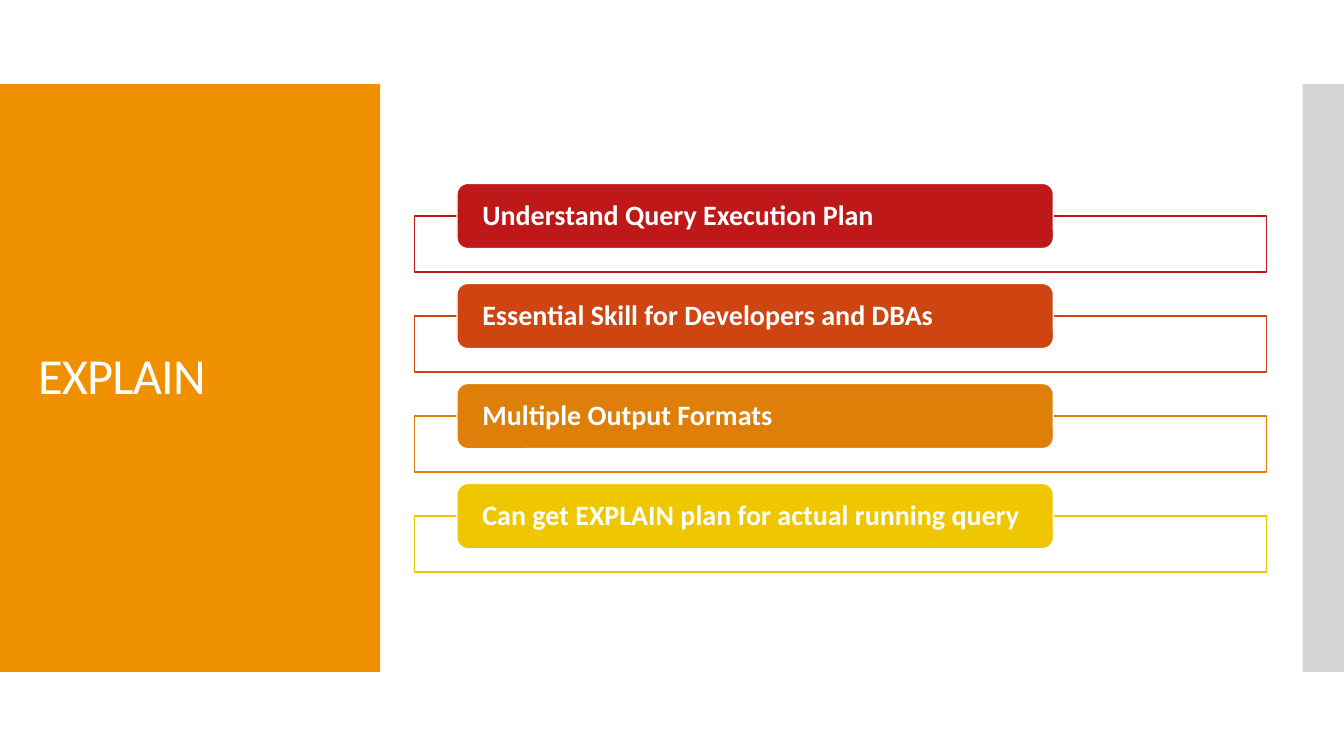
from pptx import Presentation
from pptx.dml.color import RGBColor
from pptx.enum.shapes import MSO_SHAPE as Kind
from pptx.enum.text import MSO_ANCHOR as Anchor, PP_ALIGN as Align
from pptx.util import Inches, Pt

WIDE, HIGH = 13.33, 7.5
TOP, TALL = HIGH / 9, HIGH * 7 / 9
WHITE = "FFFFFF"
ITEMS = [
    ("Understand Query Execution Plan", "BE1818"),
    ("Essential Skill for Developers and DBAs", "CE4511"),
    ("Multiple Output Formats", "DE7F09"),
    ("Can get EXPLAIN plan for actual running query", "EFC700"),
]


def color(code):
    return RGBColor.from_string(code)


def block(slide, kind, box, fill, line=None):
    shape = slide.shapes.add_shape(kind, *map(Inches, box))
    shape.shadow.inherit = False
    shape.fill.solid()
    shape.fill.fore_color.rgb = color(fill)
    if line:
        shape.line.color.rgb = color(line)
        shape.line.width = Pt(0.85)
    else:
        shape.line.fill.background()
    return shape


def write(shape, text, size, inset, bold=False):
    """Set one left-aligned white line, centred in height; return its run."""
    frame = shape.text_frame
    look = {"word_wrap": True, "vertical_anchor": Anchor.MIDDLE,
            "margin_left": Inches(inset), "margin_right": Inches(inset),
            "margin_top": 0, "margin_bottom": 0}
    for key, value in look.items():
        setattr(frame, key, value)
    para = frame.paragraphs[0]
    para.alignment, para.line_spacing = Align.LEFT, 0.9
    run = para.add_run()
    run.text = text
    for key, value in {"name": "Calibri", "size": Pt(size), "bold": bold}.items():
        setattr(run.font, key, value)
    run.font.color.rgb = color(WHITE)
    return run


def panel(slide, box, text):
    left, top, width, height = box
    block(slide, Kind.RECTANGLE, box, "EF9000")
    title = slide.shapes.add_textbox(
        *map(Inches, (left + 0.28, top + 0.4, width - 0.55, height - 0.8)))
    run = write(title, text, 36, 0.1)
    run.font._element.set("spc", "-60")


def items(slide, box, rows):
    """Stack the rows evenly, each a label over the top edge of a frame."""
    left, top, width, height = box
    step = height / len(rows)
    tab = step * 0.65
    for i, (text, code) in enumerate(rows):
        y = top + i * step
        block(slide, Kind.RECTANGLE,
              (left, y + tab / 2, width, step * 0.56), WHITE, code)
        label = block(slide, Kind.ROUNDED_RECTANGLE,
                      (left + width / 20, y, width * 0.7, tab), code, WHITE)
        write(label, text, 20, 0.22, True)


def main():
    deck = Presentation()
    deck.slide_width, deck.slide_height = Inches(WIDE), Inches(HIGH)
    slide = deck.slides.add_slide(deck.slide_layouts[6])
    block(slide, Kind.RECTANGLE, (WIDE - 0.41, TOP, 0.41, TALL), "D5D5D5")
    panel(slide, (0, TOP, 3.77, TALL), "EXPLAIN")
    items(slide, (4.11, 1.82, 8.45, 3.97), ITEMS)
    deck.save("out.pptx")


if __name__ == "__main__":
    main()
